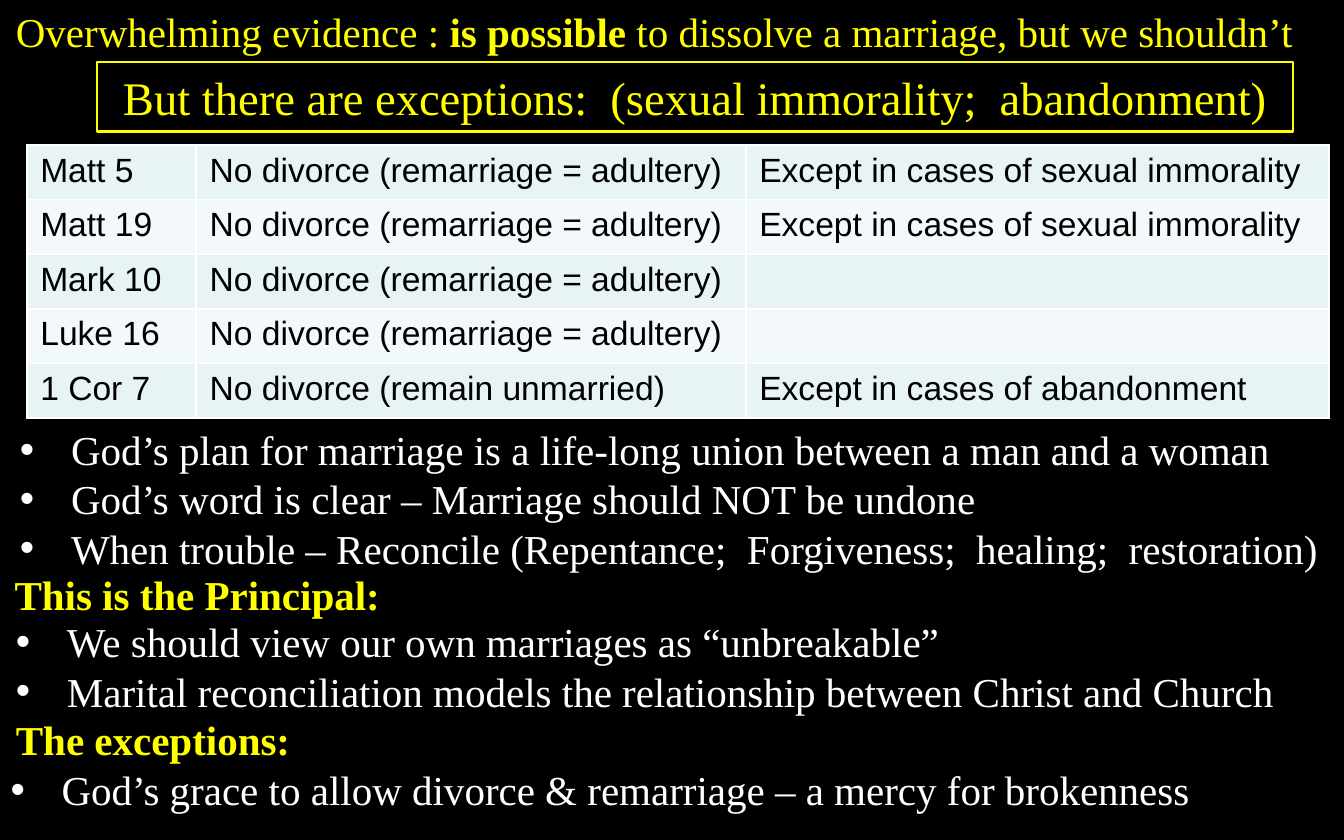
"""Build a slide on marriage, divorce and the scriptural exceptions."""
from dataclasses import dataclass

from lxml.etree import SubElement
from pptx import Presentation
from pptx.dml.color import RGBColor
from pptx.enum.shapes import MSO_SHAPE
from pptx.enum.text import MSO_ANCHOR, MSO_AUTO_SIZE, PP_ALIGN
from pptx.oxml.ns import qn
from pptx.util import Emu, Pt

EMU_PER_PX = 9144
SERIF, SANS = "Times New Roman", "Arial"
BLACK, WHITE, YELLOW = "000000", "FFFFFF", "FFFF00"
BANDS = ("E7F3F4", "F3F9FA")


@dataclass(frozen=True)
class Passage:
    left: int
    top: int
    width: int
    height: int
    lines: tuple[str, ...]
    color: str = WHITE
    bold: bool = False
    bulleted: bool = False


PASSAGES = (
    Passage(5, 311, 992, 121, (
        "God’s plan for marriage is a life-long union between a man and a woman",
        "God’s word is clear – Marriage should NOT be undone",
        "When trouble – Reconcile (Repentance;  Forgiveness;  healing;  restoration)",
    ), bulleted=True),
    Passage(2, 454, 998, 84, (
        "We should view our own marriages as “unbreakable”",
        "Marital reconciliation models the relationship between Christ and Church",
    ), bulleted=True),
    Passage(1, 419, 998, 47, ("This is the Principal:",), YELLOW, bold=True),
    Passage(2, 527, 998, 47, ("The exceptions:",), YELLOW, bold=True),
    Passage(-2, 564, 998, 47, (
        "God’s grace to allow divorce & remarriage – a mercy for brokenness",
    ), bulleted=True),
)

ADULTERY = "No divorce (remarriage = adultery)"
IMMORALITY = "Except in cases of sexual immorality"
SCRIPTURES = (
    ("Matt 5", ADULTERY, IMMORALITY),
    ("Matt 19", ADULTERY, IMMORALITY),
    ("Mark 10", ADULTERY, ""),
    ("Luke 16", ADULTERY, ""),
    ("1 Cor 7", "No divorce (remain unmarried)", "Except in cases of abandonment"),
)
COLUMN_WIDTHS = (126, 409, 434)


def px(length: int) -> Emu:
    return Emu(length * EMU_PER_PX)


def rgb(color: str) -> RGBColor:
    return RGBColor.from_string(color)


def write(paragraph, text: str, *, color: str, size: int = 22, font: str = SERIF,
          bold: bool = False) -> None:
    run = paragraph.add_run()
    run.text = text
    run.font.name = font
    run.font.size = Pt(size)
    run.font.bold = bold
    run.font.color.rgb = rgb(color)


def add_bullet(paragraph) -> None:
    properties = paragraph._p.get_or_add_pPr()
    properties.set("marL", str(px(38)))
    properties.set("indent", str(px(-38)))
    SubElement(properties, qn("a:buFont"), typeface=SANS)
    SubElement(properties, qn("a:buChar"), char="•")


def add_frame(slide, left: int, top: int, width: int, height: int):
    frame = slide.shapes.add_textbox(px(left), px(top), px(width), px(height)).text_frame
    frame.word_wrap = True
    frame.auto_size = MSO_AUTO_SIZE.SHAPE_TO_FIT_TEXT
    return frame


def draw_passage(slide, passage: Passage) -> None:
    frame = add_frame(slide, passage.left, passage.top, passage.width, passage.height)
    for index, line in enumerate(passage.lines):
        paragraph = frame.add_paragraph() if index else frame.paragraphs[0]
        if passage.bulleted:
            add_bullet(paragraph)
        write(paragraph, line, color=passage.color, bold=passage.bold)


def draw_headline(slide) -> None:
    headline = add_frame(slide, 2, 0, 998, 47).paragraphs[0]
    write(headline, "Overwhelming evidence : ", color=YELLOW)
    write(headline, "is possible", color=YELLOW, bold=True)
    write(headline, " to dissolve a marriage, but we shouldn’t", color=YELLOW)


def draw_exceptions(slide) -> None:
    exceptions = slide.shapes.add_shape(
        MSO_SHAPE.RECTANGLE, px(72), px(46), px(890), px(52))
    exceptions.shadow.inherit = False
    exceptions.fill.background()
    exceptions.line.color.rgb = rgb(YELLOW)
    exceptions.line.width = Pt(1.25)
    frame = exceptions.text_frame
    frame.word_wrap = True
    frame.auto_size = MSO_AUTO_SIZE.SHAPE_TO_FIT_TEXT
    frame.vertical_anchor = MSO_ANCHOR.TOP
    frame.paragraphs[0].alignment = PP_ALIGN.CENTER
    write(frame.paragraphs[0],
          "But there are exceptions:  (sexual immorality;  abandonment)",
          color=YELLOW, size=25)


def add_borders(cell) -> None:
    properties = cell._tc.get_or_add_tcPr()
    for side in ("lnL", "lnR", "lnT", "lnB"):
        border = SubElement(properties, qn(f"a:{side}"), w=str(Pt(1)))
        SubElement(SubElement(border, qn("a:solidFill")), qn("a:srgbClr"), val=WHITE)


def draw_scriptures(slide) -> None:
    scriptures = slide.shapes.add_table(
        len(SCRIPTURES), len(COLUMN_WIDTHS),
        px(20), px(108), px(sum(COLUMN_WIDTHS)), px(203)).table
    scriptures.first_row = False
    scriptures.horz_banding = False
    for column, width in zip(scriptures.columns, COLUMN_WIDTHS):
        column.width = px(width)
    for row, entries in enumerate(SCRIPTURES):
        for column, entry in enumerate(entries):
            cell = scriptures.cell(row, column)
            add_borders(cell)
            cell.fill.solid()
            cell.fill.fore_color.rgb = rgb(BANDS[row % 2])
            if entry:
                write(cell.text_frame.paragraphs[0], entry,
                      color=BLACK, size=18, font=SANS)


def main() -> None:
    presentation = Presentation()
    presentation.slide_width, presentation.slide_height = px(1000), px(625)
    slide = presentation.slides.add_slide(presentation.slide_layouts[6])
    slide.background.fill.solid()
    slide.background.fill.fore_color.rgb = rgb(BLACK)
    draw_headline(slide)
    draw_exceptions(slide)
    draw_scriptures(slide)
    for passage in PASSAGES:
        draw_passage(slide, passage)
    presentation.save("out.pptx")


if __name__ == "__main__":
    main()
